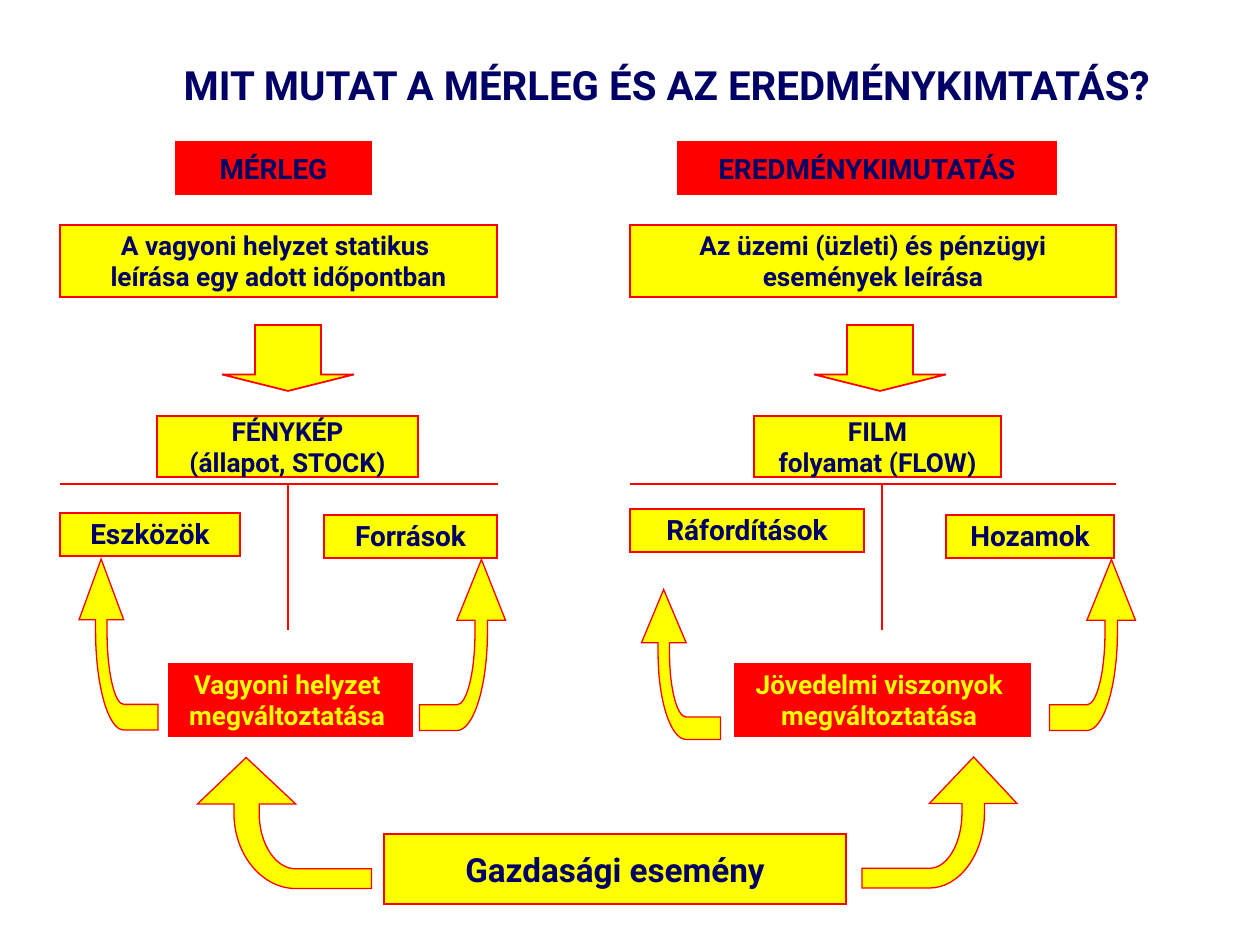
from lxml.etree import SubElement
from pptx import Presentation
from pptx.dml.color import RGBColor
from pptx.enum.shapes import MSO_CONNECTOR, MSO_SHAPE
from pptx.enum.text import MSO_ANCHOR, PP_ALIGN
from pptx.oxml.ns import qn
from pptx.util import Pt

SCALE = 914400 / 126
RED, YELLOW, NAVY = "FF0000", "FFFF00", "000066"


def paint(shape, fill, line_width):
    shape.shadow.inherit = False
    shape.fill.solid()
    shape.fill.fore_color.rgb = RGBColor.from_string(fill)
    shape.line.color.rgb = RGBColor.from_string(RED)
    shape.line.width = Pt(line_width)
    SubElement(shape.line._get_or_add_ln(), qn("a:miter"), lim="800000")


def write(shape, text, size, color, anchor, wrap):
    frame = shape.text_frame
    frame.text = text
    frame.word_wrap = wrap
    frame.vertical_anchor = anchor
    frame.margin_left = frame.margin_right = Pt(4.5)
    frame.margin_top = frame.margin_bottom = Pt(2.25)
    for paragraph in frame.paragraphs:
        paragraph.alignment = PP_ALIGN.CENTER
        for run in paragraph.runs:
            run.font.name = "Roboto"
            run.font.size = Pt(size)
            run.font.bold = True
            run.font.color.rgb = RGBColor.from_string(color)


presentation = Presentation()
presentation.slide_width = round(1260 * SCALE)
presentation.slide_height = round(945 * SCALE)
slide = presentation.slides.add_slide(presentation.slide_layouts[6])
shapes = slide.shapes

title = shapes.add_textbox(*(round(value * SCALE) for value in (122, 56, 1091, 55)))
write(title, "MIT MUTAT A MÉRLEG ÉS AZ EREDMÉNYKIMTATÁS?", 23, NAVY, MSO_ANCHOR.TOP, True)

TOP, MIDDLE = MSO_ANCHOR.TOP, MSO_ANCHOR.MIDDLE
boxes = [
    ("MÉRLEG", (178, 144, 191, 48), 16, RED, NAVY, 3, MIDDLE, False),
    ("EREDMÉNYKIMUTATÁS", (680, 144, 374, 48), 16, RED, NAVY, 3, MIDDLE, False),
    ("A vagyoni helyzet statikus \nleírása egy adott időpontban", (60, 225, 437, 72), 15, YELLOW, NAVY, 0.75, TOP, True),
    ("Az üzemi (üzleti) és pénzügyi események leírása", (630, 225, 486, 72), 15, YELLOW, NAVY, 0.75, TOP, True),
    ("FÉNYKÉP\v(állapot, STOCK)", (157, 416, 261, 61), 15, YELLOW, NAVY, 0.75, MIDDLE, True),
    ("FILM\vfolyamat (FLOW)", (754, 416, 247, 61), 15, YELLOW, NAVY, 0.75, MIDDLE, True),
    ("Eszközök", (60, 513, 180, 43), 16, YELLOW, NAVY, 0.75, TOP, True),
    ("Források", (324, 515, 173, 43), 16, YELLOW, NAVY, 0.75, TOP, True),
    ("Ráfordítások", (630, 509, 234, 43), 16, YELLOW, NAVY, 0.75, TOP, True),
    ("Hozamok", (946, 515, 168, 43), 16, YELLOW, NAVY, 0.75, TOP, True),
    ("Vagyoni helyzet \nmegváltoztatása ", (169, 664, 243, 72), 15, RED, YELLOW, 0.75, TOP, False),
    ("Jövedelmi viszonyok \nmegváltoztatása ", (735, 664, 295, 72), 15, RED, YELLOW, 0.75, TOP, False),
    ("Gazdasági esemény", (384, 834, 462, 70), 19, YELLOW, NAVY, 0.75, MIDDLE, False),
]
for text, bounds, size, fill, color, line_width, anchor, wrap in boxes:
    box = shapes.add_shape(MSO_SHAPE.RECTANGLE, *(round(value * SCALE) for value in bounds))
    paint(box, fill, line_width)
    write(box, text, size, color, anchor, wrap)

for left in (222, 814):
    down_arrow = shapes.add_shape(MSO_SHAPE.DOWN_ARROW, *(round(value * SCALE) for value in (left, 325, 132, 66)))
    down_arrow.adjustments[0] = 0.5
    down_arrow.adjustments[1] = 0.25
    paint(down_arrow, YELLOW, 1)

account_lines = [
    ((60, 484, 498, 484), 1.5),
    ((288, 484, 288, 630), 1.5),
    ((630, 484, 1116, 484), 1.5),
    ((882, 484, 882, 630), 0.75),
]
for ends, line_width in account_lines:
    connector = shapes.add_connector(MSO_CONNECTOR.STRAIGHT, *(round(value * SCALE) for value in ends))
    connector.line.color.rgb = RGBColor.from_string(RED)
    connector.line.width = Pt(line_width)
    SubElement(connector._element.spPr, qn("a:effectLst"))

bent_outline = [
    (0, 0.28), (0.355, 0), (0.355, 0.21), (0.425, 0.21), (1, 0.565), (1, 1),
    (0.85, 1), (0.85, 0.565), (0.425, 0.355), (0.355, 0.355), (0.355, 0.565),
]
bend_controls = {4: [(0.74, 0.21), (1, 0.37)], 8: [(0.85, 0.45), (0.66, 0.355)]}
bent_arrows = [
    (219, 736, 131, 174, 270),
    (33, 605, 171, 79, 270),
    (377, 602, 171, 86, 90),
    (606, 625, 150, 79, 270),
    (1007, 602, 171, 86, 90),
    (874, 745, 131, 155, 90),
]
for left, top, width, height, rotation in bent_arrows:
    flipped = rotation == 270
    points = [
        (round((left + width * (1 - x if flipped else x)) * SCALE), round((top + height * y) * SCALE))
        for x, y in bent_outline
    ]
    builder = shapes.build_freeform(*points[0])
    builder.add_line_segments(points[1:], close=True)
    bent_arrow = builder.convert_to_shape()
    segments = list(bent_arrow._element.iter(qn("a:lnTo")))
    for index, controls in bend_controls.items():
        segment = segments[index - 1]
        curve = segment.makeelement(qn("a:cubicBezTo"))
        for x, y in controls:
            SubElement(
                curve,
                qn("a:pt"),
                x=str(round(width * (1 - x if flipped else x) * SCALE)),
                y=str(round(height * y * SCALE)),
            )
        curve.append(segment[0])
        segment.getparent().replace(segment, curve)
    bent_arrow.rotation = rotation
    paint(bent_arrow, YELLOW, 0.75)

presentation.save("out.pptx")
